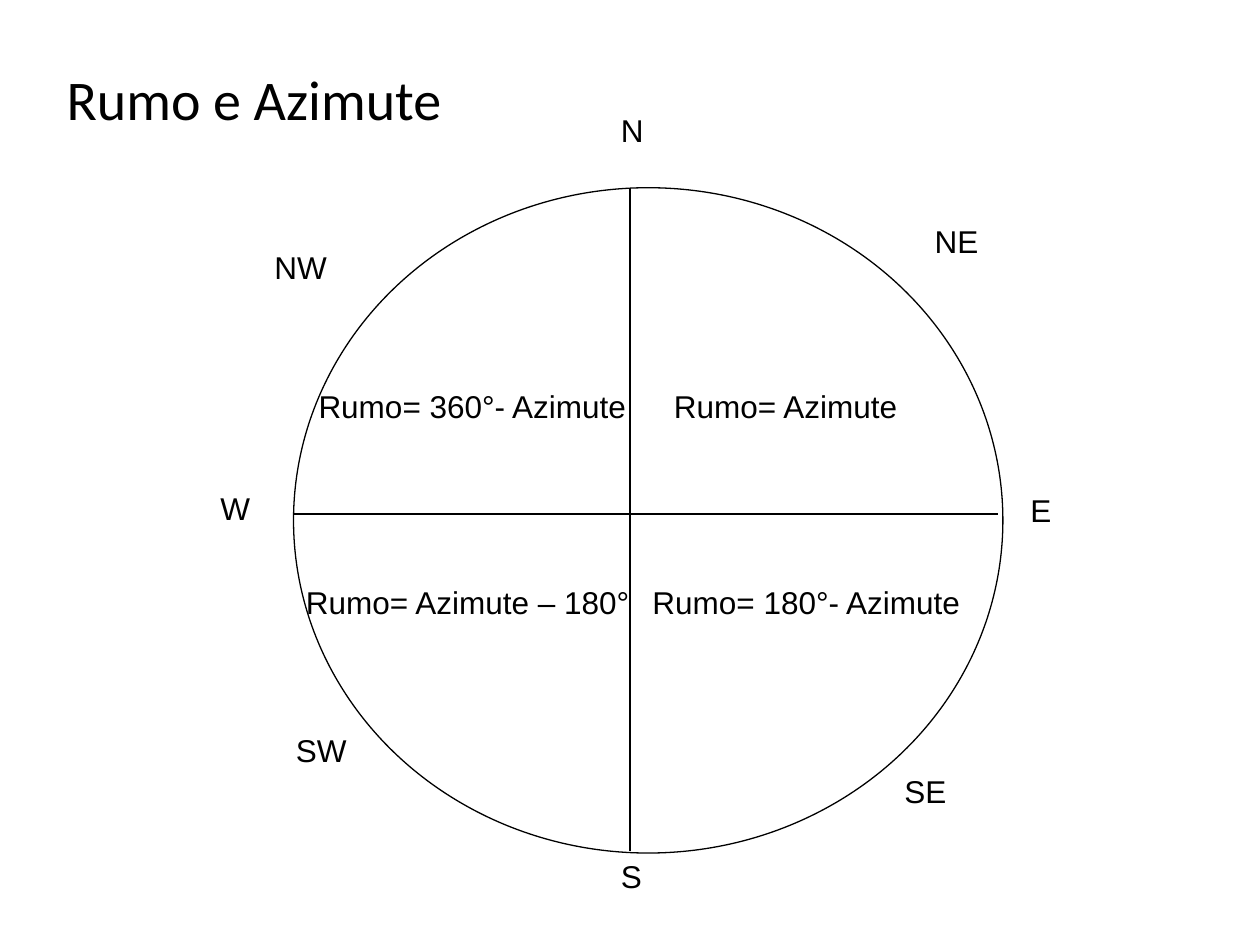
from typing import NamedTuple

from pptx import Presentation
from pptx.dml.color import RGBColor
from pptx.enum.shapes import MSO_CONNECTOR as Link, MSO_SHAPE as Form
from pptx.enum.text import MSO_ANCHOR as Anchor, MSO_AUTO_SIZE as Fit
from pptx.oxml.ns import qn
from pptx.util import Inches, Pt

BLACK = "000000"


class Label(NamedTuple):
    text: str
    left: float
    top: float
    width: float


class Axis(NamedTuple):
    x1: float
    y1: float
    x2: float
    y2: float


POINTS = [
    Label("E", 8.08, 3.85, 0.37),
    Label("S", 4.83, 6.75, 0.37),
    Label("N", 4.83, 0.83, 0.38),
    Label("W", 1.65, 3.83, 0.44),
    Label("NE", 7.32, 1.71, 0.55),
    Label("SE", 7.08, 6.08, 0.55),
    Label("SW", 2.25, 5.75, 0.6),
    Label("NW", 2.08, 1.92, 0.62),
]
UPPER, LOWER = 3.02, 4.58
RULES = [
    Label("Rumo= Azimute", 5.25, UPPER, 1.99),
    Label("Rumo= 180°- Azimute", 5.08, LOWER, 2.66),
    Label("Rumo= Azimute – 180°", 2.33, LOWER, 2.78),
    Label("Rumo= 360°- Azimute", 2.43, UPPER, 2.66),
]
AXES = [Axis(5, 1.5, 5, 6.75), Axis(2.33, 4.08, 7.92, 4.08)]


def color(code: str) -> RGBColor:
    return RGBColor.from_string(code)


def write(shapes, item: Label, *, height: float = 0.4, size: float = 18,
          font: str = "Arial", wrap: bool = False, fit=Fit.SHAPE_TO_FIT_TEXT,
          anchor=Anchor.TOP) -> None:
    box = shapes.add_textbox(Inches(item.left), Inches(item.top),
                             Inches(item.width), Inches(height))
    frame = box.text_frame
    frame.word_wrap = wrap
    frame.auto_size = fit
    frame.vertical_anchor = anchor
    run = frame.paragraphs[0].add_run()
    run.text = item.text
    run.font.size = Pt(size)
    run.font.name = font
    run.font.color.rgb = color(BLACK)


def stroke(line) -> None:
    line.color.rgb = color(BLACK)
    line.width = Pt(0.75)


def draw_ring(shapes) -> None:
    ring = shapes.add_shape(Form.OVAL, Inches(2.33), Inches(1.49),
                            Inches(5.63), Inches(5.28))
    ring.shadow.inherit = False
    ring.fill.background()
    stroke(ring.line)


def draw_axis(shapes, axis: Axis) -> None:
    link = shapes.add_connector(Link.STRAIGHT, *map(Inches, axis))
    stroke(link.line)
    props = link._element.spPr
    props.append(props.makeelement(qn("a:effectLst"), {}))


def main() -> None:
    deck = Presentation()
    deck.slide_width, deck.slide_height = Inches(10), Inches(7.5)
    slide = deck.slides.add_slide(deck.slide_layouts[6])

    # Title
    write(slide.shapes, Label("Rumo e Azimute", 0.43, 0.28, 9), height=1,
          size=32, font="Calibri", wrap=True, fit=Fit.NONE,
          anchor=Anchor.MIDDLE)

    # Compass: ring, axes, then labels
    rose = slide.shapes.add_group_shape().shapes
    draw_ring(rose)
    for axis in AXES:
        draw_axis(rose, axis)
    for item in POINTS + RULES:
        write(rose, item)

    deck.save("out.pptx")


if __name__ == "__main__":
    main()
